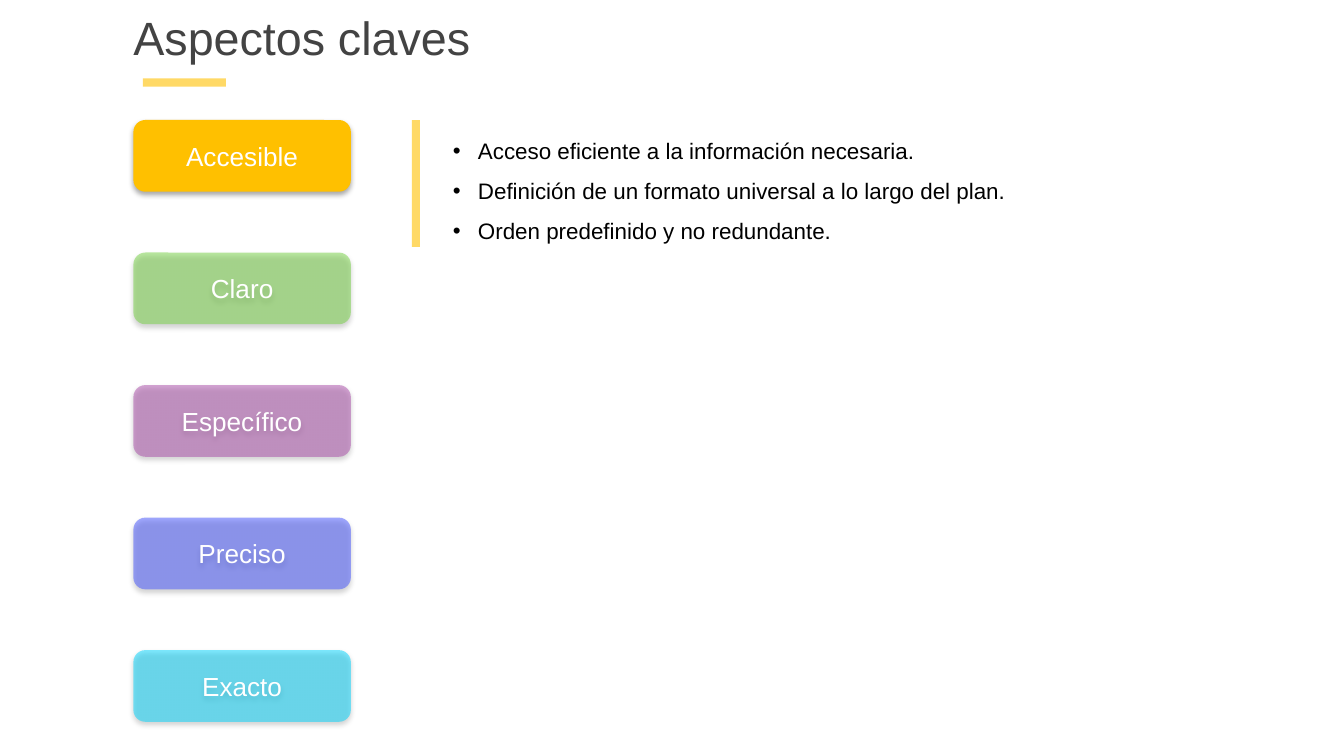
from lxml.etree import SubElement
from pptx import Presentation
from pptx.dml.color import RGBColor
from pptx.enum.shapes import MSO_SHAPE
from pptx.enum.text import MSO_ANCHOR, MSO_AUTO_SIZE, PP_ALIGN
from pptx.oxml import parse_xml
from pptx.oxml.ns import nsdecls, qn
from pptx.util import Pt

HUES = {
    "title": "434343", "bar": "FFD966", "text": "000000", "label": "FFFFFF",
    "gold": "FFC000", "green": "75D242", "plum": "AB4CAA",
    "blue": "4353FF", "cyan": "00D6FF",
}
SHADE = f"""<a:effectLst {nsdecls('a')}>
  <a:outerShdw blurRad="{Pt(3.1)}" dist="{Pt(1.8)}" dir="5400000" rotWithShape="0">
    <a:srgbClr val="000000"><a:alpha val="35000"/></a:srgbClr>
  </a:outerShdw>
</a:effectLst>"""


def add_box(kind, left, top, width, height, hue):
    box = slide.shapes.add_shape(kind, Pt(left), Pt(top), Pt(width), Pt(height))
    box.shadow.inherit = False
    box.fill.solid()
    box.fill.fore_color.rgb = RGBColor.from_string(HUES[hue])
    box.line.fill.background()
    return box


def add_run(para, text, size, hue):
    run = para.add_run()
    run.text = text
    run.font.name = "Arial"
    run.font.size = Pt(size)
    run.font.color.rgb = RGBColor.from_string(HUES[hue])


deck = Presentation()
deck.slide_width, deck.slide_height = Pt(720), Pt(405)
slide = deck.slides.add_slide(deck.slide_layouts[6])

# Title and its underline
add_box(MSO_SHAPE.RECTANGLE, 76.5, 42, 44.5, 4.4, "bar")
title = slide.shapes.add_textbox(Pt(71.5), Pt(5), Pt(476), Pt(38))
frame = title.text_frame
frame.word_wrap = True
frame.margin_left = 0
frame.margin_right = Pt(5)
frame.margin_top = frame.margin_bottom = Pt(3)
para = frame.paragraphs[0]
para.line_spacing = 0.9
add_run(para, "Aspectos claves", 25, "title")

# Column of aspects, the first one highlighted
aspects = [("Accesible", "gold"), ("Claro", "green"), ("Específico", "plum"),
           ("Preciso", "blue"), ("Exacto", "cyan")]
for row, (name, hue) in enumerate(aspects):
    box = add_box(MSO_SHAPE.ROUNDED_RECTANGLE, 71.5, 64.3 + row * 71, 116.5, 38.4, hue)
    props = box.element.spPr
    props.replace(props.find(qn("a:effectLst")), parse_xml(SHADE))
    if row > 0:
        color = props.find(qn("a:solidFill")).find(qn("a:srgbClr"))
        SubElement(color, qn("a:alpha"), val="50000")
    box.text_frame.vertical_anchor = MSO_ANCHOR.MIDDLE
    para = box.text_frame.paragraphs[0]
    para.alignment = PP_ALIGN.CENTER
    add_run(para, name, 14, "label")

# Upright bar beside the details
bar = add_box(MSO_SHAPE.RECTANGLE, 188.75, 96.1, 68, 4.4, "bar")
bar.rotation = 90

# Details of the highlighted aspect
points = ["Acceso eficiente a la información necesaria.",
          "Definición de un formato universal a lo largo del plan.",
          "Orden predefinido y no redundante."]
notes = slide.shapes.add_textbox(Pt(235.5), Pt(62.6), Pt(441), Pt(70))
frame = notes.text_frame
frame.word_wrap = True
frame.auto_size = MSO_AUTO_SIZE.SHAPE_TO_FIT_TEXT
for row, point in enumerate(points):
    para = frame.add_paragraph() if row else frame.paragraphs[0]
    props = para._p.get_or_add_pPr()
    props.set("marL", str(Pt(13.5)))
    props.set("indent", str(Pt(-13.5)))
    color = SubElement(props, qn("a:buClr"))
    SubElement(color, qn("a:srgbClr"), val=HUES["text"])
    SubElement(props, qn("a:buFont"), typeface="Arial")
    SubElement(props, qn("a:buChar"), char="•")
    para.line_spacing = 1.5
    add_run(para, point, 12, "text")

deck.save("out.pptx")
